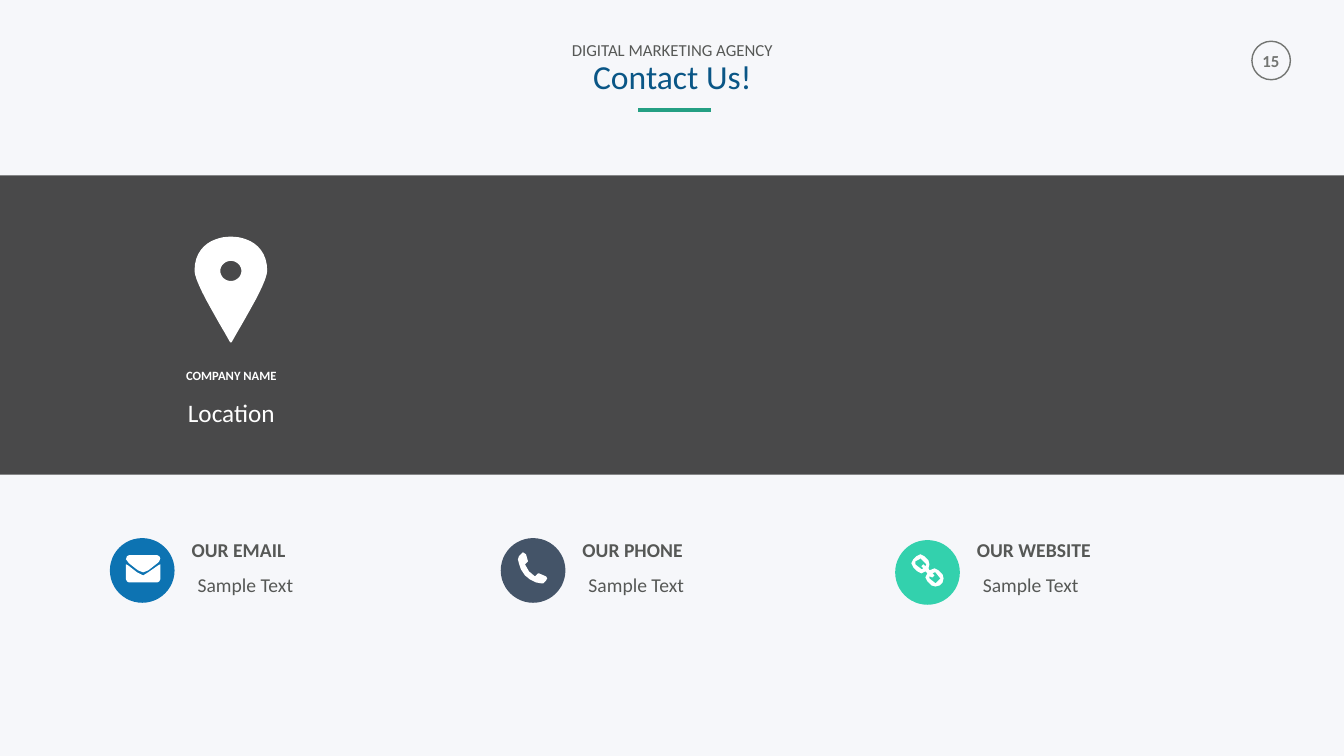
from math import cos, pi, sin

from lxml.etree import SubElement
from pptx import Presentation
from pptx.dml.color import RGBColor
from pptx.enum.shapes import MSO_CONNECTOR as Connector, MSO_SHAPE as Shape
from pptx.enum.text import MSO_AUTO_SIZE as AutoSize, PP_ALIGN as Align
from pptx.oxml.ns import qn
from pptx.util import Cm, Pt

FONT = "Calibri"
GREY = "565856"
BADGE_GREY = "737572"
WHITE = "FFFFFF"
INSETS = (0.25, 0.13)
GRID = Cm(2.54) / 1000

ENVELOPE = [
    [(47, 25), (38, 32), (33, 34), (28, 32), (19, 25), (16, 21), (17, 18), (19, 17),
     (47, 17), (49, 18), (50, 20), (49, 23)],
    [(50, 41), (49, 43), (47, 44), (19, 44), (17, 43), (16, 41), (16, 26), (18, 27),
     (27, 34), (33, 37), (38, 34), (48, 27), (50, 26)],
]
HANDSET = [
    [(45, 38), (38, 35), (37, 35), (34, 38), (28, 33), (24, 26), (27, 23), (25, 16),
     (22, 14), (21, 15), (18, 18), (17, 21), (18, 25), (20, 31), (24, 37), (29, 41),
     (35, 44), (41, 45), (42, 45), (45, 42), (46, 40)],
]
CHAIN = [
    [(47, 42), (44, 45), (40, 46), (36, 45), (32, 41), (30, 37), (32, 33), (30, 31),
     (26, 33), (22, 31), (18, 27), (16, 23), (18, 19), (21, 16), (25, 14), (29, 16),
     (33, 20), (34, 24), (33, 28), (34, 30), (39, 28), (43, 30), (47, 34), (48, 38)],
    [(30, 23), (26, 19), (25, 18), (24, 19), (20, 21), (20, 24), (25, 28), (26, 29),
     (28, 28), (26, 26), (28, 24), (30, 26), (31, 24)],
    [(44, 37), (40, 32), (39, 32), (37, 33), (39, 35), (37, 37), (34, 36), (34, 38),
     (39, 42), (40, 43), (41, 42), (44, 39), (45, 38)],
]
PIN_CURVES = [
    [(35, 0), (21, 0), (0, 7), (0, 33)],
    [(0, 33), (0, 45), (28, 90), (35, 103)],
    [(35, 103), (42, 90), (70, 45), (70, 33)],
    [(70, 33), (70, 7), (49, 0), (35, 0)],
]

CONTACTS = [
    (2.77, 13.56, "0D73B2", ENVELOPE, "OUR EMAIL"),
    (12.62, 13.56, "445468", HANDSET, "OUR PHONE"),
    (22.56, 13.61, "33D1AD", CHAIN, "OUR WEBSITE"),
]


def rgb(value):
    """Turn a hex string into a colour."""
    return RGBColor.from_string(value)


def style(shape, fill=None, line=None, width=1):
    """Set fill and outline, leaving out whichever is not given."""
    shape.shadow.inherit = False
    if fill:
        shape.fill.solid()
        shape.fill.fore_color.rgb = rgb(fill)
    else:
        shape.fill.background()
    if line:
        shape.line.color.rgb = rgb(line)
        shape.line.width = Pt(width)
    else:
        shape.line.fill.background()


def add_preset(shapes, preset, box, **look):
    """Draw a preset shape in a box given in centimetres."""
    shape = shapes.add_shape(preset, *map(Cm, box))
    style(shape, **look)
    return shape


def add_text(shapes, box, lines, align=Align.LEFT, spacing=1.0, insets=INSETS,
             wrap=True, grow=True):
    """Write lines of (text, size, colour, bold) in a text box."""
    frame = shapes.add_textbox(*map(Cm, box)).text_frame
    frame.word_wrap = wrap
    frame.auto_size = AutoSize.SHAPE_TO_FIT_TEXT if grow else AutoSize.NONE
    frame.margin_left = frame.margin_right = Cm(insets[0])
    frame.margin_top = frame.margin_bottom = Cm(insets[1])
    for index, (text, size, colour, bold) in enumerate(lines):
        paragraph = frame.add_paragraph() if index else frame.paragraphs[0]
        paragraph.text = text
        paragraph.alignment = align
        paragraph.line_spacing = spacing
        paragraph.font.name = FONT
        paragraph.font.size = Pt(size)
        paragraph.font.bold = bold
        paragraph.font.color.rgb = rgb(colour)


def add_outline(shapes, left, top, contours, **look):
    """Draw closed contours measured in hundredths of an inch."""
    scaled = [[(x * 10, y * 10) for x, y in contour] for contour in contours]
    builder = shapes.build_freeform(*scaled[0][0], scale=GRID)
    for index, contour in enumerate(scaled):
        if index:
            builder.move_to(*contour[0])
        builder.add_line_segments(contour[1:], close=True)
    style(builder.convert_to_shape(Cm(left), Cm(top)), **look)


def bezier(points, steps=12):
    """Sample a cubic curve, leaving out its end point."""
    for step in range(steps):
        t = step / steps
        weights = ((1 - t) ** 3, 3 * t * (1 - t) ** 2, 3 * t * t * (1 - t), t ** 3)
        yield tuple(sum(w * p[axis] for w, p in zip(weights, points)) for axis in (0, 1))


def add_header(shapes):
    """Draw the title, its underline and the page number."""
    add_text(shapes, (31.52, 1.14, 1.02, 0.76), [("15", 12, BADGE_GREY, True)],
             Align.CENTER, wrap=False)
    add_preset(shapes, Shape.OVAL, (31.55, 1.04, 0.97, 0.97), line=BADGE_GREY)
    add_text(shapes, (14.15, 0.94, 5.59, 1.65),
             [("DIGITAL MARKETING AGENCY", 12, GREY, False),
              ("Contact Us!", 24, "0A5686", False)],
             Align.CENTER, 0.9, wrap=False)
    underline = shapes.add_connector(Connector.STRAIGHT, *map(Cm, (17.91, 2.77, 16.08, 2.77)))
    underline.line.color.rgb = rgb("249F83")
    underline.line.width = Pt(3)
    SubElement(underline._element.spPr, qn("a:effectLst"))


def add_band(shapes, width):
    """Draw the see-through dark band across the slide."""
    band = add_preset(shapes, Shape.RECTANGLE, (0, 4.42, width, 7.54), fill="000000")
    colour = band._element.spPr.find(qn("a:solidFill"))[0]
    SubElement(colour, qn("a:alpha"), val="70000")


def add_location(shapes):
    """Draw the map pin with the company name and location."""
    add_text(shapes, (2.39, 9.14, 6.88, 0.64), [("COMPANY NAME", 9, WHITE, True)],
             Align.CENTER)
    add_text(shapes, (2.39, 9.65, 6.88, 1.17), [("Location", 18, WHITE, False)],
             Align.CENTER, 1.3)
    body = [point for curve in PIN_CURVES for point in bezier(curve)]
    angles = [pi * step / 16 for step in range(32)]
    hole = [(35 + 11.5 * cos(angle), 33 + 11 * sin(angle)) for angle in angles]
    add_outline(shapes, 4.93, 5.99, [body, hole], fill=WHITE, line=WHITE, width=1.5)


def add_contact(shapes, left, top, colour, icon, label):
    """Draw one contact: icon in a disc, label and detail."""
    group = shapes.add_group_shape().shapes
    add_preset(group, Shape.OVAL, (left, top, 1.63, 1.63), fill=colour)
    add_text(group, (left + 2.06, 13.41, 6.73, 0.79), [(label, 14, GREY, True)],
             spacing=1.25, insets=(0, 0), grow=False)
    add_text(group, (left + 1.96, 14, 7.09, 1.07), [("Sample Text", 14, GREY, False)],
             spacing=1.5)
    add_outline(group, left, top, icon, fill=WHITE)


def main():
    """Build the contact slide and save it."""
    deck = Presentation()
    deck.slide_width, deck.slide_height = Cm(33.87), Cm(19.05)
    slide = deck.slides.add_slide(deck.slide_layouts[6])
    slide.background.fill.solid()
    slide.background.fill.fore_color.rgb = rgb("F6F7FA")
    add_header(slide.shapes)
    add_band(slide.shapes, 33.87)
    for contact in CONTACTS:
        add_contact(slide.shapes, *contact)
    add_location(slide.shapes)
    deck.save("out.pptx")


if __name__ == "__main__":
    main()
